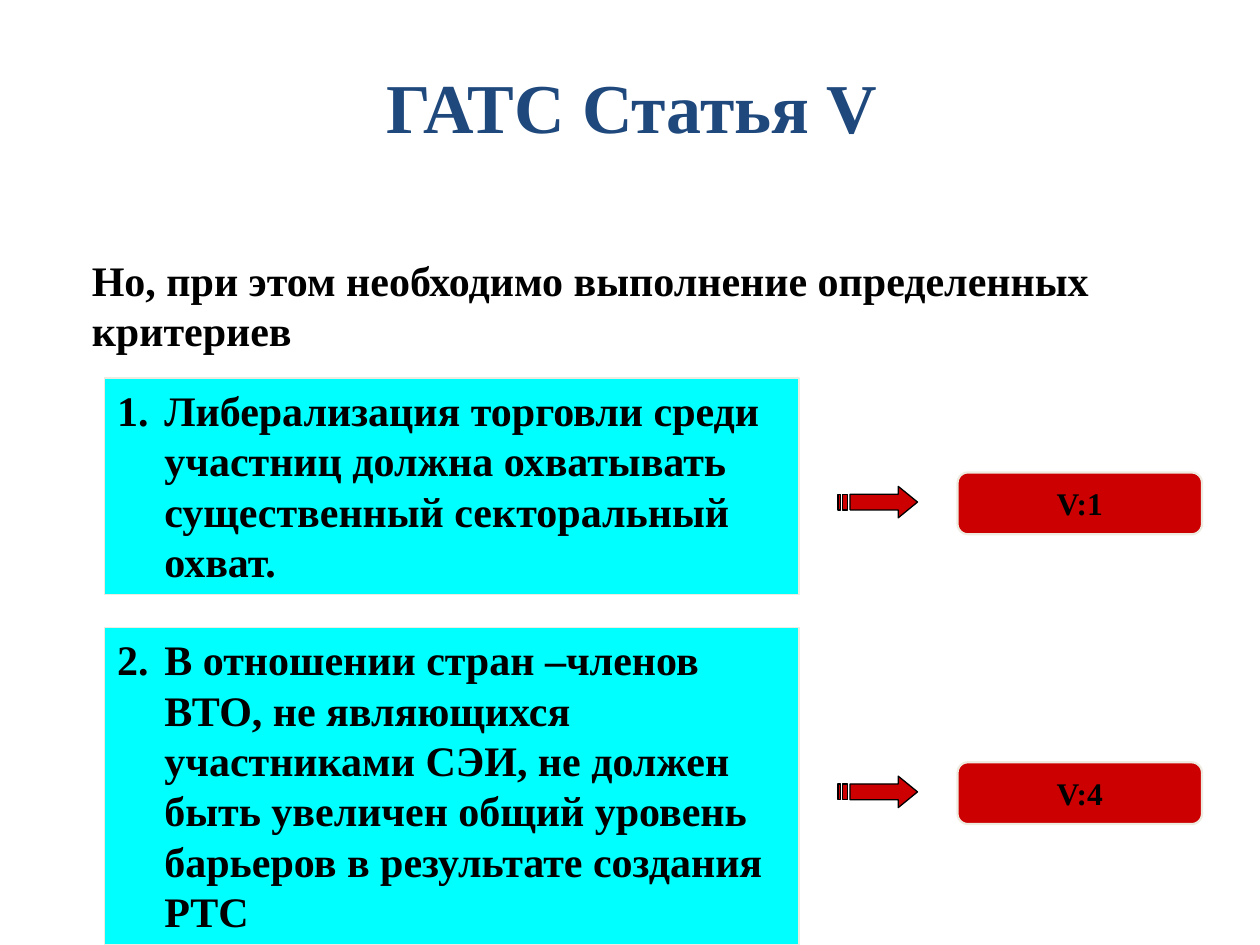
"""Build the slide on the criteria of GATS Article V."""
from lxml.etree import SubElement
from pptx import Presentation
from pptx.dml.color import RGBColor
from pptx.enum.shapes import MSO_SHAPE
from pptx.enum.text import MSO_ANCHOR, MSO_AUTO_SIZE, PP_ALIGN
from pptx.oxml.ns import qn
from pptx.util import Pt


def paint(shape, fill, line, width):
    shape.shadow.inherit = False
    shape.fill.solid()
    shape.fill.fore_color.rgb = RGBColor.from_string(fill)
    shape.line.color.rgb = RGBColor.from_string(line)
    shape.line.width = Pt(width)


def write(shape, text, size, color, align, anchor):
    frame = shape.text_frame
    frame.text = text
    for name, value in {"word_wrap": True, "auto_size": MSO_AUTO_SIZE.NONE,
                        "vertical_anchor": anchor}.items():
        setattr(frame, name, value)
    paragraph = frame.paragraphs[0]
    paragraph.alignment = align
    font = paragraph.runs[0].font
    for name, value in {"name": "Times New Roman", "size": Pt(size), "bold": True}.items():
        setattr(font, name, value)
    font.color.rgb = RGBColor.from_string(color)
    return paragraph


presentation = Presentation()
presentation.slide_width, presentation.slide_height = Pt(720), Pt(540)
slide = presentation.slides.add_slide(presentation.slide_layouts[5])
shapes = slide.shapes

title = shapes.title
for name, value in {"left": 64.8, "top": 31.7, "width": 592.6, "height": 56.9}.items():
    setattr(title, name, Pt(value))
write(title, "ГАТС Статья V", 40, "1F497D", PP_ALIGN.CENTER, MSO_ANCHOR.MIDDLE)

intro = shapes.add_textbox(Pt(45.4), Pt(141.8), Pt(637.9), Pt(65.5))
write(intro, "Но, при этом необходимо выполнение определенных критериев",
      24, "000000", PP_ALIGN.LEFT, MSO_ANCHOR.TOP)

criteria = [
    ("Либерализация торговли среди участниц должна охватывать существенный "
     "секторальный охват.", "V:1", 216, 123.8, 270),
    ("В отношении стран –членов ВТО, не являющихся участниками СЭИ, не должен быть "
     "увеличен общий уровень барьеров в результате создания РТС", "V:4", 358.6, 181.4, 435.6),
]
arrow_parts = [
    [(34.5, 0), (34.5, 4.5), (7, 4.5), (7, 13.5), (34.5, 13.5), (34.5, 18), (45.5, 9)],
    [(2.8, 4.5), (2.8, 13.5), (5.6, 13.5), (5.6, 4.5)],
    [(0, 4.5), (0, 13.5), (1.4, 13.5), (1.4, 4.5)],
]

for number, (text, article, top, height, label_top) in enumerate(criteria, 1):
    box = shapes.add_shape(MSO_SHAPE.RECTANGLE, Pt(59.8), Pt(top), Pt(396.7), Pt(height))
    paint(box, "00FFFF", "EEECE1", 0.75)
    paragraph = write(box, text, 24, "000000", PP_ALIGN.LEFT, MSO_ANCHOR.TOP)
    properties = paragraph._p.get_or_add_pPr()
    properties.set("marL", str(Pt(27)))
    properties.set("indent", str(Pt(-27)))
    SubElement(properties, qn("a:buFont"), typeface="+mj-lt")
    SubElement(properties, qn("a:buAutoNum"), type="arabicPeriod", startAt=str(number))

    label = shapes.add_shape(MSO_SHAPE.ROUNDED_RECTANGLE, Pt(547.2), Pt(label_top),
                             Pt(139.7), Pt(35.3))
    paint(label, "CC0000", "EEECE1", 1.25)
    write(label, article, 18, "000000", PP_ALIGN.CENTER, MSO_ANCHOR.MIDDLE)

    builder = None
    for part in arrow_parts:
        points = [(Pt(478.8 + x), Pt(label_top + 7.9 + y)) for x, y in part]
        if builder is None:
            builder = shapes.build_freeform(*points[0])
        else:
            builder.move_to(*points[0])
        builder.add_line_segments(points[1:], close=True)
    paint(builder.convert_to_shape(), "CC0000", "000000", 0.75)

presentation.save("out.pptx")
